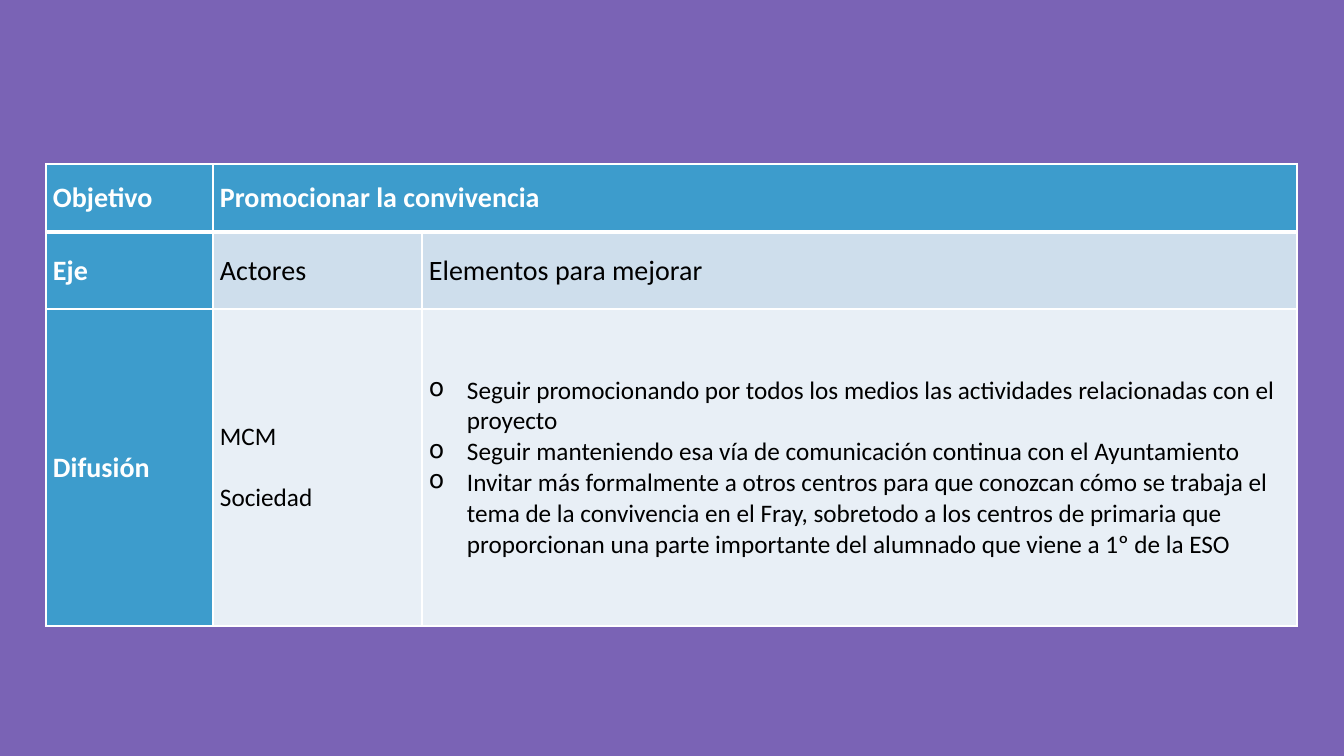
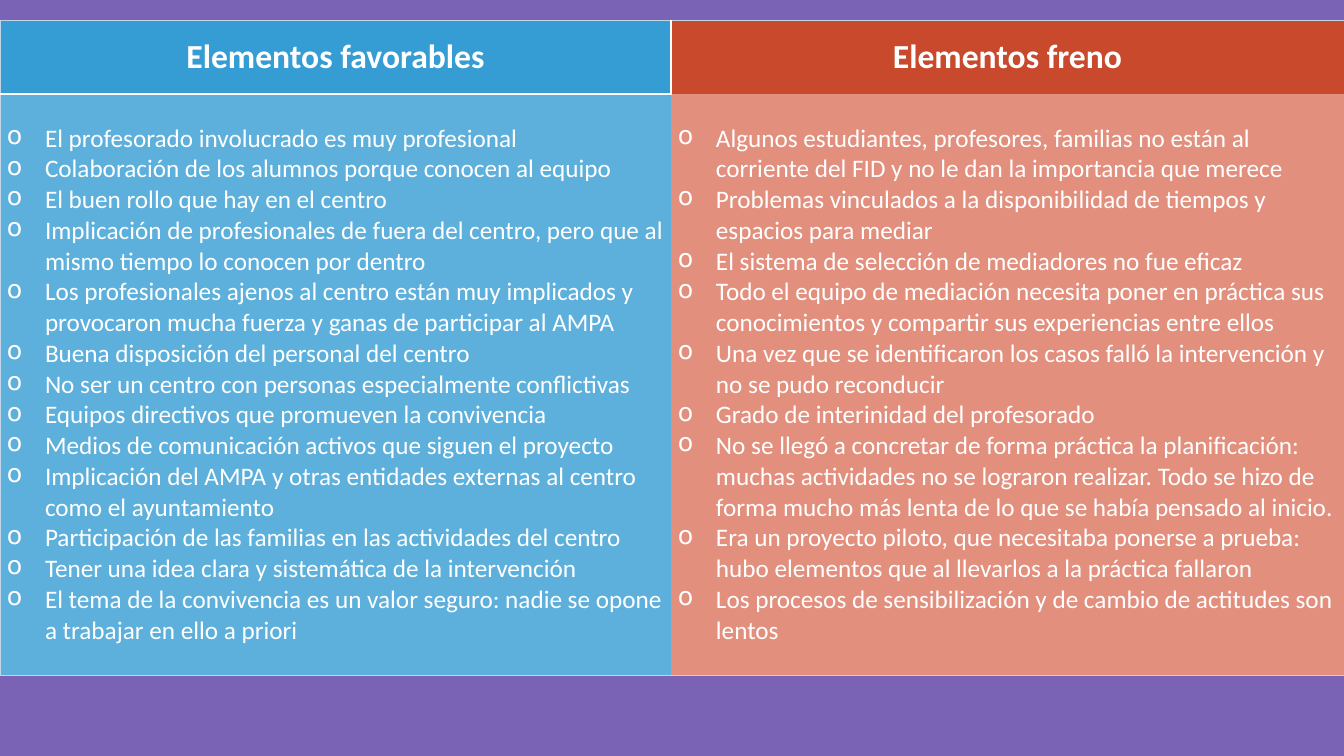
"""Build two slides with tables on a school coexistence project."""
from lxml.etree import SubElement
from pptx import Presentation
from pptx.dml.color import RGBColor
from pptx.enum.text import MSO_ANCHOR as ANCHOR, PP_ALIGN as ALIGN
from pptx.oxml.ns import qn
from pptx.util import Pt

FONT = "Calibri"
PURPLE, WHITE, BLACK = "7A63B5", "FFFFFF", "000000"
BLUE, PALE, PALER = "3D9CCC", "CEDEEC", "E8EFF6"
SKY, LIGHT_SKY, RED, SALMON, EDGE = "359DD3", "5DB0DC", "C9492C", "E28F7D", "C0D5E7"
INSET, INDENT, BLANK_LINE = 7, 38, 22

IMPROVEMENTS = [
    "Seguir promocionando por todos los medios las actividades relacionadas con el proyecto",
    "Seguir manteniendo esa vía de comunicación continua con el Ayuntamiento",
    "Invitar más formalmente a otros centros para que conozcan cómo se trabaja el tema de la "
    "convivencia en el Fray, sobretodo a los centros de primaria que proporcionan una parte "
    "importante del alumnado que viene a 1º de la ESO",
]
FAVOURABLE = [
    "El profesorado involucrado es muy profesional",
    "Colaboración de los alumnos porque conocen al equipo",
    "El buen rollo que hay en el centro",
    "Implicación de profesionales de fuera del centro, pero que al mismo tiempo lo conocen por dentro",
    "Los profesionales ajenos al centro están muy implicados y provocaron mucha fuerza y ganas "
    "de participar al AMPA",
    "Buena disposición del personal del centro",
    "No ser un centro con personas especialmente conflictivas",
    "Equipos directivos que promueven la convivencia",
    "Medios de comunicación activos que siguen el proyecto",
    "Implicación del AMPA y otras entidades externas al centro como el ayuntamiento",
    "Participación de las familias en las actividades del centro",
    "Tener una idea clara y sistemática de la intervención",
    "El tema de la convivencia es un valor seguro: nadie se opone a trabajar en ello a priori",
]
OBSTACLES = [
    "Algunos estudiantes, profesores, familias no están al corriente del FID y no le dan la "
    "importancia que merece",
    "Problemas vinculados a la disponibilidad de tiempos y espacios para mediar",
    "El sistema de selección de mediadores no fue eficaz",
    "Todo el equipo de mediación necesita poner en práctica sus conocimientos y compartir sus "
    "experiencias entre ellos",
    "Una vez que se identificaron los casos falló la intervención y no se pudo reconducir",
    "Grado de interinidad del profesorado",
    "No se llegó a concretar de forma práctica la planificación: muchas actividades no se "
    "lograron realizar. Todo se hizo de forma mucho más lenta de lo que se había pensado al inicio.",
    "Era un proyecto piloto, que necesitaba ponerse a prueba: hubo elementos que al llevarlos "
    "a la práctica fallaron",
    "Los procesos de sensibilización y de cambio de actitudes son lentos",
]

HEAD = dict(fill=BLUE, bold=True)
PLAIN = dict(color=BLACK, fill=PALE)
DETAIL = dict(size=18, color=BLACK, fill=PALER)
TITLE = dict(size=24, bold=True, align=ALIGN.CENTER)
ITEMS = dict(size=18, bullet="o")
THIN, LINE, MID, THICK = (EDGE, 0.5), (WHITE, 1), (WHITE, 1.5), (WHITE, 3)

TABLES = [
    dict(
        left=46, top=164, cols=[167, 209, 875], rows=[68, 77, 317],
        cells=[
            [(["Objetivo"], HEAD), (["Promocionar la convivencia"], HEAD), ([], HEAD)],
            [(["Eje"], HEAD), (["Actores"], PLAIN), (["Elementos para mejorar"], PLAIN)],
            [(["Difusión"], HEAD), (["MCM", "Sociedad"], dict(DETAIL, gap=BLANK_LINE)),
             (IMPROVEMENTS, dict(DETAIL, bullet="o"))],
        ],
        merges=[((0, 1), (0, 2))],
        across=[[LINE] * 3, [THICK] * 3, [LINE] * 3, [LINE] * 3],
        down=[[LINE] * 4] * 3,
    ),
    dict(
        left=0, top=20, cols=[671, 673], rows=[74, 581],
        cells=[
            [(["Elementos favorables"], dict(TITLE, fill=SKY)),
             (["Elementos freno"], dict(TITLE, fill=RED))],
            [(FAVOURABLE, dict(ITEMS, fill=LIGHT_SKY)), (OBSTACLES, dict(ITEMS, fill=SALMON))],
        ],
        merges=[],
        across=[[THIN] * 2, [MID, None], [THIN] * 2],
        down=[[THIN, LINE, THIN], [THIN, None, THIN]],
    ),
]


def px(n):
    return round(n * 914400 / 100.8)


def rgb(value):
    return RGBColor.from_string(value)


def add_text(tf, lines, size=20, color=WHITE, bold=False, align=ALIGN.LEFT, bullet=None, gap=0):
    for i, line in enumerate(lines):
        p = tf.add_paragraph() if i else tf.paragraphs[0]
        p.alignment = align
        if i and gap:
            p.space_before = Pt(gap)
        if bullet:
            pPr = p._p.get_or_add_pPr()
            pPr.set("marL", str(px(INDENT)))
            pPr.set("indent", str(-px(INDENT)))
            SubElement(pPr, qn("a:buChar")).set("char", bullet)
        r = p.add_run()
        r.text = line
        r.font.name, r.font.size, r.font.bold = FONT, Pt(size), bold
        r.font.color.rgb = rgb(color)


def set_borders(cell, **sides):
    tcPr = cell._tc.get_or_add_tcPr()
    for side, border in sides.items():
        ln = SubElement(tcPr, qn(f"a:ln{side}"))
        if border:
            color, width = border
            ln.set("w", str(Pt(width)))
            SubElement(SubElement(ln, qn("a:solidFill")), qn("a:srgbClr")).set("val", color)
        else:
            SubElement(ln, qn("a:noFill"))


def add_table(slide, left, top, cols, rows, cells, merges, across, down):
    sp = slide.shapes.add_table(
        len(rows), len(cols), px(left), px(top), px(sum(cols)), px(sum(rows)))
    table = sp.table
    table.first_row = table.horz_banding = False
    for column, width in zip(table.columns, cols):
        column.width = px(width)
    for row, height in zip(table.rows, rows):
        row.height = px(height)
    for i, row in enumerate(cells):
        for j, (lines, style) in enumerate(row):
            cell = table.cell(i, j)
            cell.vertical_anchor = ANCHOR.MIDDLE
            cell.margin_left = cell.margin_right = px(INSET)
            cell.margin_top = cell.margin_bottom = 0
            set_borders(cell, L=down[i][j], R=down[i][j + 1], T=across[i][j], B=across[i + 1][j])
            cell.fill.solid()
            cell.fill.fore_color.rgb = rgb(style["fill"])
            add_text(cell.text_frame, lines, **{k: v for k, v in style.items() if k != "fill"})
    for start, end in merges:
        table.cell(*start).merge(table.cell(*end))


def main():
    prs = Presentation()
    prs.slide_width, prs.slide_height = px(1344), px(756)
    for spec in TABLES:
        slide = prs.slides.add_slide(prs.slide_layouts[6])
        slide.background.fill.solid()
        slide.background.fill.fore_color.rgb = rgb(PURPLE)
        add_table(slide, **spec)
    prs.save("out.pptx")


if __name__ == "__main__":
    main()
